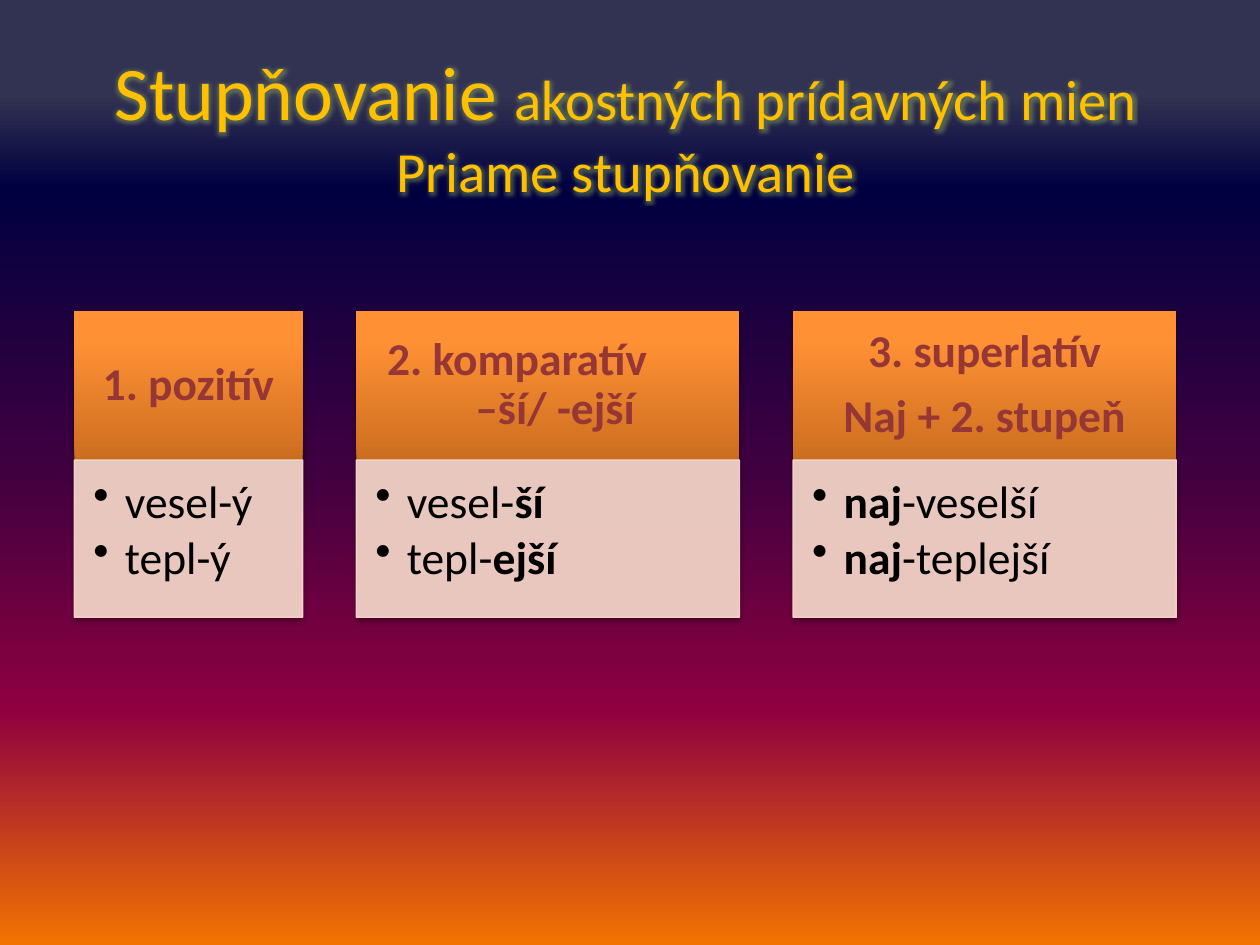
"""Build a slide on the direct comparison of Slovak qualitative adjectives."""
from lxml.etree import SubElement
from pptx import Presentation
from pptx.dml.color import RGBColor
from pptx.enum.shapes import MSO_SHAPE as Shape
from pptx.enum.text import MSO_ANCHOR as Anchor, PP_ALIGN as Align
from pptx.oxml.ns import qn
from pptx.util import Pt

FONT = "Calibri"
TITLE = [("Stupňovanie ", 43.2), ("akostných prídavných mien", 32.4),
         ("\vPriame stupňovanie", 32.4)]
DEGREES = [
    {"width": 130.5, "heading": ["1. pozitív"],
     "examples": [[("vesel-ý", False)], [("tepl-ý", False)]]},
    {"width": 219, "heading": ["2. komparatív", "–ší/ -ejší"], "indents": [3.3, 53.6],
     "examples": [[("vesel-", False), ("ší", True)],
                  [("tepl-", False), ("ejší", True)]]},
    {"width": 219, "heading": ["3. superlatív", "Naj + 2. stupeň"],
     "examples": [[("naj", True), ("-veselší", False)],
                  [("naj", True), ("-teplejší", False)]]},
]
SKY = [(10, "323252"), (20, "000040"), (50, "400040"), (75, "8F0040"), (100, "F27300")]
ORANGE = [(0, "CC6E20"), (80, "FF9034"), (100, "FF9136")]
LEFT, TOP, GAP = 42.5, 177.8, 30.6
HEADING_HEIGHT, BODY_HEIGHT = 85, 90
TEXT_SIZE = 26


def color(hex_string):
    return RGBColor.from_string(hex_string)


def add_xml(parent, tag, **attributes):
    return SubElement(parent, qn(tag), {key: str(value) for key, value in attributes.items()})


def add_alpha_color(parent, hex_string, percent):
    add_xml(add_xml(parent, "a:srgbClr", val=hex_string), "a:alpha", val=percent * 1000)


def set_gradient(fill, properties, stops, angle):
    fill.gradient()
    stop_list = properties.find(".//" + qn("a:gsLst"))
    for stop in list(stop_list):
        stop_list.remove(stop)
    for position, hex_string in stops:
        stop = add_xml(stop_list, "a:gs", pos=position * 1000)
        add_xml(stop, "a:srgbClr", val=hex_string)
    properties.find(".//" + qn("a:lin")).set("ang", str(angle * 60000))


def set_opacity(properties, percent):
    for solid in properties.iter(qn("a:solidFill")):
        add_xml(solid[0], "a:alpha", val=percent * 1000)


def add_run(paragraph, text, size, hex_string, bold=False):
    run = paragraph.add_run()
    run.text = text
    font = run.font
    font.name, font.size, font.bold = FONT, Pt(size), bold
    font.color.rgb = color(hex_string)
    return run


def add_glow(run):
    properties = run.font._element if hasattr(run.font, "_element") else run._r.rPr
    effects = add_xml(properties, "a:effectLst")
    properties.find(qn("a:solidFill")).addnext(effects)
    add_alpha_color(add_xml(effects, "a:glow", rad=Pt(5)), "9BBB59", 40)


def add_box(slide, left, top, width, height, anchor, margins):
    box = slide.shapes.add_shape(Shape.RECTANGLE, Pt(left), Pt(top), Pt(width), Pt(height))
    box.shadow.inherit = False
    effects = box._element.spPr.find(qn("a:effectLst"))
    shadow = add_xml(effects, "a:outerShdw", blurRad=Pt(3.1), dist=Pt(1.8),
                     dir=5400000, rotWithShape=0)
    add_alpha_color(shadow, "000000", 35)
    frame = box.text_frame
    frame.word_wrap, frame.vertical_anchor = True, anchor
    (frame.margin_left, frame.margin_top,
     frame.margin_right, frame.margin_bottom) = map(Pt, margins)
    return box


def add_paragraphs(frame, count, space_after):
    for index in range(count):
        paragraph = frame.add_paragraph() if index else frame.paragraphs[0]
        paragraph.line_spacing = 0.9
        paragraph.space_after = Pt(space_after if index < count - 1 else 0)
        yield paragraph


def add_heading(slide, degree, left):
    box = add_box(slide, left, TOP, degree["width"], HEADING_HEIGHT,
                  Anchor.MIDDLE, (14.4, 8.3, 14.4, 8.3))
    set_gradient(box.fill, box._element.spPr, ORANGE, 270)
    box.line.fill.background()
    lines, indents = degree["heading"], degree.get("indents")
    paragraphs = add_paragraphs(box.text_frame, len(lines), 0 if indents else 9.1)
    for index, paragraph in enumerate(paragraphs):
        paragraph.alignment = Align.LEFT if indents else Align.CENTER
        if indents:
            paragraph._p.get_or_add_pPr().set("marL", str(Pt(indents[index])))
        add_run(paragraph, lines[index], TEXT_SIZE, "953735", True)


def add_examples(slide, degree, left):
    box = add_box(slide, left, TOP + HEADING_HEIGHT, degree["width"], BODY_HEIGHT,
                  Anchor.TOP, (10.9, 10.9, 14.4, 16.4))
    box.fill.solid()
    box.fill.fore_color.rgb = box.line.color.rgb = color("FCDDCF")
    box.line.width = Pt(0.75)
    set_opacity(box._element.spPr, 90)
    examples = degree["examples"]
    paragraphs = add_paragraphs(box.text_frame, len(examples), 3.9)
    for paragraph, runs in zip(paragraphs, examples):
        paragraph.alignment = Align.LEFT
        properties = paragraph._p.get_or_add_pPr()
        properties.set("marL", str(Pt(18)))
        properties.set("indent", str(Pt(-18)))
        add_xml(properties, "a:buChar", char="•")
        for text, bold in runs:
            add_run(paragraph, text, TEXT_SIZE, "000000", bold)


def add_title(slide):
    title = slide.shapes.title
    title.left, title.top, title.width, title.height = map(Pt, (31, 21.6, 653, 156.2))
    frame = title.text_frame
    frame.word_wrap, frame.vertical_anchor = True, Anchor.TOP
    frame.margin_top = Pt(4.2)
    paragraph = frame.paragraphs[0]
    paragraph.alignment = Align.CENTER
    for text, size in TITLE:
        if text.startswith("\v"):
            paragraph.add_line_break()
        add_glow(add_run(paragraph, text.lstrip("\v"), size, "FFC000"))


def main():
    presentation = Presentation()
    presentation.slide_width, presentation.slide_height = Pt(720), Pt(540)
    slide = presentation.slides.add_slide(presentation.slide_layouts[5])
    set_gradient(slide.background.fill, slide._element.cSld, SKY, 90)
    add_title(slide)
    left = LEFT
    for degree in DEGREES:
        add_heading(slide, degree, left)
        add_examples(slide, degree, left)
        left += degree["width"] + GAP
    presentation.save("out.pptx")


if __name__ == "__main__":
    main()
